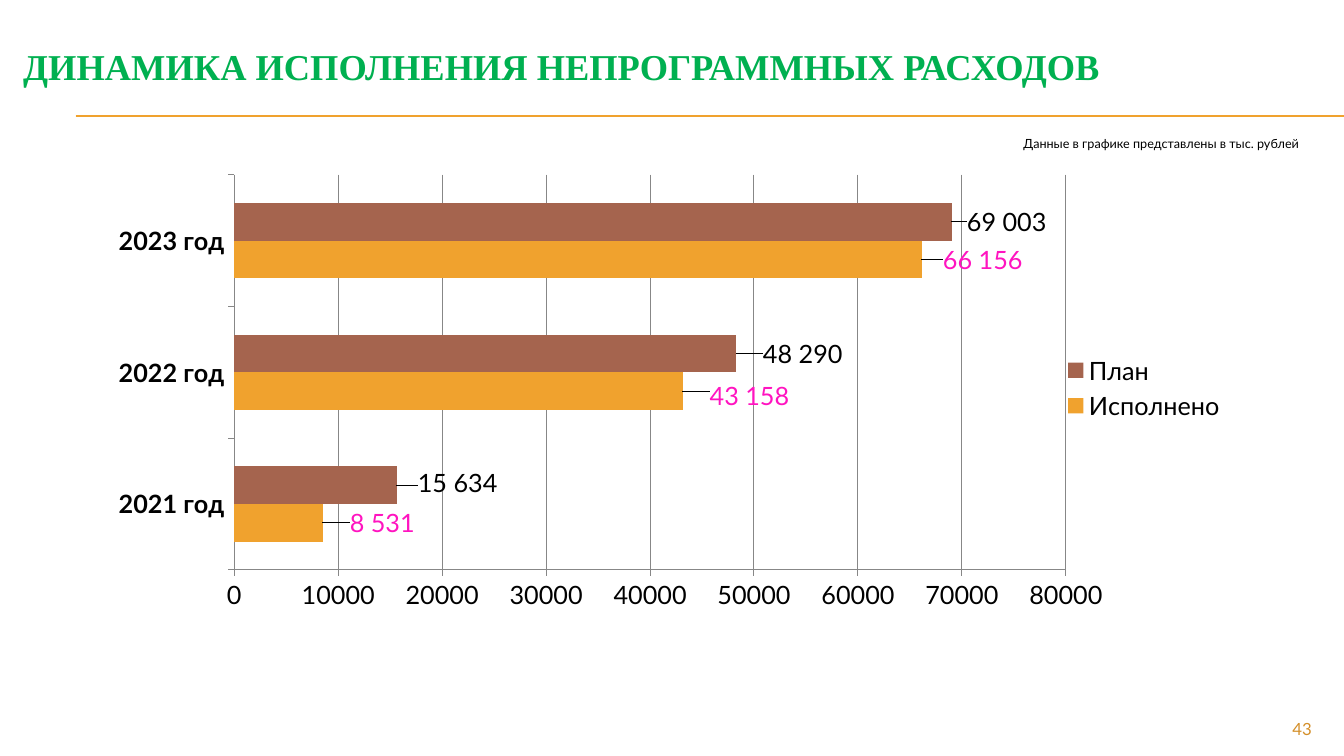
from dataclasses import dataclass

from lxml.etree import SubElement
from pptx import Presentation
from pptx.chart.data import CategoryChartData
from pptx.dml.color import RGBColor
from pptx.enum.chart import (XL_CHART_TYPE, XL_LABEL_POSITION,
                             XL_LEGEND_POSITION, XL_TICK_MARK)
from pptx.enum.shapes import MSO_CONNECTOR
from pptx.enum.text import MSO_ANCHOR, PP_ALIGN
from pptx.oxml import parse_xml
from pptx.oxml.ns import nsdecls, qn
from pptx.util import Inches, Pt


@dataclass(frozen=True)
class Theme:
    green: str = "00B050"
    orange: str = "F0A22E"
    brown: str = "A5644E"
    number: str = "D48F29"
    pink: str = "FF14C0"
    black: str = "000000"
    grid: str = "878787"
    title_font: str = "Times New Roman"
    body_font: str = "Lato"
    title_size: float = 26
    chart_size: float = 18
    number_size: float = 12
    note_size: float = 9


@dataclass(frozen=True)
class Box:
    left: float
    top: float
    width: float
    height: float

    def emu(self) -> list:
        return [Inches(v) for v in (self.left, self.top, self.width, self.height)]


@dataclass(frozen=True)
class BarSeries:
    name: str
    values: tuple
    color: str
    label_color: str
    shifts: tuple  # label offsets as fractions of the chart
    leaders: bool


@dataclass(frozen=True)
class Note:
    text: str
    box: Box
    size: float
    color: str
    wrap: bool


T = Theme()
YEARS = ("2021 год", "2022 год", "2023 год")
SERIES = (
    BarSeries("Исполнено", (8531, 43158, 66156), T.orange, T.pink,
              ((0.02, 0), (0.02, 0.01), (0.015, 0)), True),
    BarSeries("План", (15634, 48290, 69003), T.brown, T.black,
              ((0.015, -0.005), (0.02, 0), (0.01, 0)), False),
)
NOTES = (
    Note("43", Box(12, 7.08, 1.11, 0.27), T.number_size, T.number, True),
    Note("Данные в графике представлены в тыс. рублей",
         Box(9.98, 1.3, 3, 0.25), T.note_size, T.black, False),
)
RULE_TOPS = (1.15, 1.16)
PLOT = {"x": 0.123, "y": 0.04, "w": 0.728, "h": 0.852}
C15 = "http://schemas.microsoft.com/office/drawing/2012/chart"


def style(font, size: float, color: str, name: str = T.body_font,
          bold: bool = False) -> None:
    font.size, font.name, font.bold = Pt(size), name, bold
    font.color.rgb = RGBColor.from_string(color)


def add_rule(s, top: float) -> None:
    line = s.shapes.add_connector(MSO_CONNECTOR.STRAIGHT, Inches(0.75),
                                  Inches(top), Inches(13.33), Inches(top))
    line.line.color.rgb = RGBColor.from_string(T.orange)
    line.line.width = Pt(0.75)
    SubElement(line._element.spPr, qn("a:effectLst"))


def add_note(s, note: Note) -> None:
    tf = s.shapes.add_textbox(*note.box.emu()).text_frame
    tf.word_wrap = note.wrap
    p = tf.paragraphs[0]
    p.text = note.text
    p.alignment = PP_ALIGN.RIGHT
    style(p.runs[0].font, note.size, note.color)


def layout_xml(**parts):
    """Manual chart layout made of the given child elements."""
    body = "".join(f'<c:{k} val="{v}"/>' for k, v in parts.items())
    return parse_xml(f'<c:layout {nsdecls("c")}><c:manualLayout>{body}'
                     "</c:manualLayout></c:layout>")


def format_series(series, bar: BarSeries) -> None:
    series.format.fill.solid()
    series.format.fill.fore_color.rgb = RGBColor.from_string(bar.color)
    for i, (value, (dx, dy)) in enumerate(zip(bar.values, bar.shifts)):
        label = series.points[i].data_label
        label.text_frame.text = f"{value:,}".replace(",", " ")
        style(label.text_frame.paragraphs[0].runs[0].font, T.chart_size, bar.label_color)
        label.position = XL_LABEL_POSITION.OUTSIDE_END
    labels = series.data_labels
    labels.show_value = True
    style(labels.font, T.chart_size, bar.label_color)
    # Label offsets and leader lines
    d = labels._element
    for item, (dx, dy) in zip(d.findall(qn("c:dLbl")), bar.shifts):
        item.insert(1, layout_xml(x=dx, y=dy))
    for old in d.findall(qn("c:showLeaderLines")):
        d.remove(old)
    d.append(parse_xml(
        f'<c:extLst {nsdecls("c")}>'
        f'<c:ext uri="{{CE6537A1-D6FC-4f65-9D91-7224C49458BB}}" xmlns:c15="{C15}">'
        f'<c15:showLeaderLines val="{int(bar.leaders)}"/></c:ext></c:extLst>'))


def format_axis(axis, bold: bool) -> None:
    axis.major_tick_mark = XL_TICK_MARK.OUTSIDE
    axis.minor_tick_mark = XL_TICK_MARK.NONE
    style(axis.tick_labels.font, T.chart_size, T.black, bold=bold)
    axis.format.line.color.rgb = RGBColor.from_string(T.grid)
    axis.format.line.width = Pt(0.75)


def add_bar_chart(s, box: Box) -> None:
    data = CategoryChartData()
    data.categories = YEARS
    for bar in SERIES:
        data.add_series(bar.name, bar.values)
    chart = s.shapes.add_chart(XL_CHART_TYPE.BAR_CLUSTERED, *box.emu(), data).chart
    style(chart.font, T.chart_size, T.black)
    chart.has_title = False
    chart.has_legend = True
    chart.legend.position = XL_LEGEND_POSITION.RIGHT
    chart.legend.include_in_layout = False
    plot = chart.plots[0]
    plot.gap_width, plot.overlap, plot.vary_by_categories = 75, 0, False
    plot.gap_width = 150
    for series, bar in zip(plot.series, SERIES):
        format_series(series, bar)
    # Axes and gridlines
    format_axis(chart.category_axis, True)
    axis = chart.value_axis
    format_axis(axis, False)
    axis.minimum_scale, axis.maximum_scale, axis.major_unit = 0, 80000, 10000
    axis.has_major_gridlines = True
    axis.major_gridlines.format.line.color.rgb = RGBColor.from_string(T.grid)
    axis.major_gridlines.format.line.width = Pt(0.75)
    # Inner plot area
    area = chart._chartSpace.chart.plotArea
    for old in area.findall(qn("c:layout")):
        area.remove(old)
    area.insert(0, layout_xml(layoutTarget="inner", xMode="edge", yMode="edge", **PLOT))


def main() -> None:
    prs = Presentation()
    prs.slide_width, prs.slide_height = Inches(13.33), Inches(7.5)
    s = prs.slides.add_slide(prs.slide_layouts[5])
    for top in RULE_TOPS:
        add_rule(s, top)

    # Title
    title = s.shapes.title
    title.left, title.top, title.width, title.height = Box(0.13, 0.21, 12.85, 0.89).emu()
    tf = title.text_frame
    tf.text = "ДИНАМИКА ИСПОЛНЕНИЯ НЕПРОГРАММНЫХ РАСХОДОВ"
    tf.vertical_anchor = MSO_ANCHOR.MIDDLE
    p = tf.paragraphs[0]
    p.alignment = PP_ALIGN.LEFT
    style(p.runs[0].font, T.title_size, T.green, T.title_font, True)

    # Chart, page number and units note
    add_bar_chart(s, Box(0.93, 1.55, 11.33, 4.6))
    for note in NOTES:
        add_note(s, note)
    prs.save("out.pptx")


if __name__ == "__main__":
    main()
